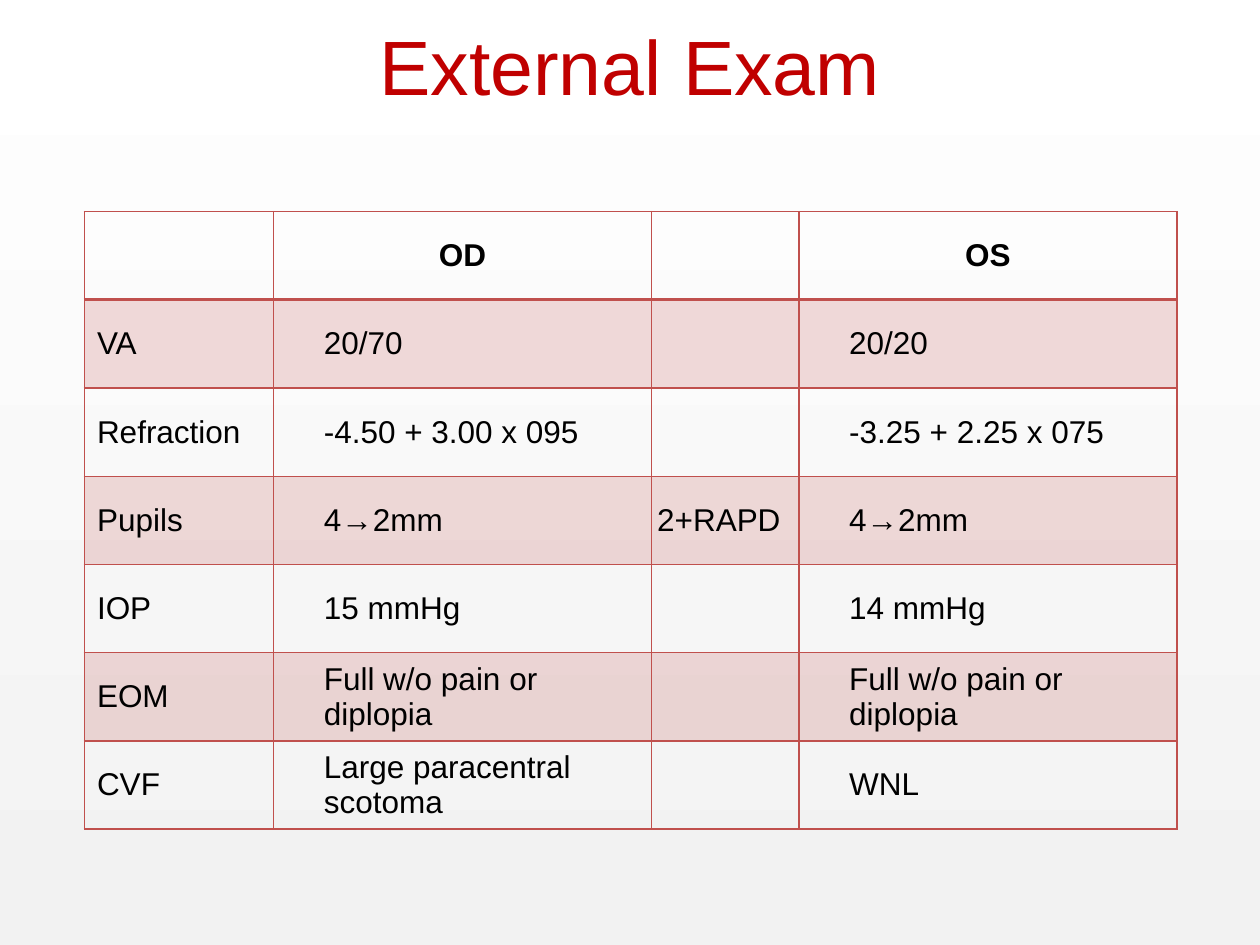
from dataclasses import dataclass

from lxml import etree
from pptx import Presentation
from pptx.dml.color import RGBColor
from pptx.enum.text import MSO_ANCHOR, PP_ALIGN
from pptx.oxml.ns import qn
from pptx.util import Inches, Pt

MIDDLE = MSO_ANCHOR.MIDDLE
CENTER = PP_ALIGN.CENTER
LEFT = PP_ALIGN.LEFT


@dataclass(frozen=True)
class Theme:
    font: str = "Arial"
    title: str = "C00000"
    text: str = "000000"
    accent: str = "C0504D"
    top: str = "FFFFFF"
    base: str = "F2F2F2"
    band: int = 20
    head_size: int = 44
    cell_size: int = 18


THEME = Theme()
COLS = [1.5, 3, 1.17, 3]
ROW = 0.7
EXAM = [
    ["", "OD", "", "OS"],
    ["VA", "20/70", "", "20/20"],
    ["Refraction", "-4.50 + 3.00 x 095", "", "-3.25 + 2.25 x 075"],
    ["Pupils", "4→2mm", "2+RAPD", "4→2mm"],
    ["IOP", "15 mmHg", "", "14 mmHg"],
    ["EOM", "Full w/o pain or diplopia", "", "Full w/o pain or diplopia"],
    ["CVF", "Large paracentral scotoma", "", "WNL"],
]


def write(frame, text, size, color, align, bold=False):
    para = frame.paragraphs[0]
    para.alignment = align
    run = para.add_run()
    run.text = text
    font = run.font
    font.name, font.size, font.bold = THEME.font, Pt(size), bold
    font.color.rgb = RGBColor.from_string(color)


def paint(slide):
    fill = slide.background.fill
    fill.gradient()
    fill.gradient_angle = 90
    for stop, color, place in zip(fill.gradient_stops, (THEME.base, THEME.top), (0, 1)):
        stop.color.rgb = RGBColor.from_string(color)
        stop.position = place


def add_title(slide, box, text):
    title = slide.shapes.title
    title.left, title.top, title.width, title.height = map(Inches, box)
    frame = title.text_frame
    frame.vertical_anchor = MIDDLE
    write(frame, text, THEME.head_size, THEME.title, CENTER)


def edge(cell, side, width):
    line = etree.SubElement(cell._tc.get_or_add_tcPr(), qn(f"a:ln{side}"), w=str(Pt(width)))
    solid = etree.SubElement(line, qn("a:solidFill"))
    etree.SubElement(solid, qn("a:srgbClr"), val=THEME.accent)


def shade(cell, banded):
    if not banded:
        cell.fill.background()
        return
    cell.fill.solid()
    cell.fill.fore_color.rgb = RGBColor.from_string(THEME.accent)
    color = cell._tc.tcPr.find(qn("a:solidFill")).find(qn("a:srgbClr"))
    etree.SubElement(color, qn("a:alpha"), val=str(THEME.band * 1000))


def fill_cell(cell, text, row, col):
    head = row == 0
    for side in "LRTB":
        heavy = (head and side == "B") or (row == 1 and side == "T")
        edge(cell, side, 2 if heavy else 1)
    shade(cell, row % 2 == 1)
    cell.vertical_anchor = MIDDLE
    if not text:
        return
    if not head and col:
        cell.margin_left = Inches(0 if col == 2 else 0.4)
    align = CENTER if head or col == 2 else LEFT
    write(cell.text_frame, text, THEME.cell_size, THEME.text, align, head)


def add_exam(slide, left, top):
    size = map(Inches, (left, top, sum(COLS), ROW * len(EXAM)))
    table = slide.shapes.add_table(len(EXAM), len(COLS), *size).table
    table.horz_banding = False
    table.first_row = False
    for col, width in zip(table.columns, COLS):
        col.width = Inches(width)
    for r, line in enumerate(EXAM):
        table.rows[r].height = Inches(ROW)
        for c, text in enumerate(line):
            fill_cell(table.cell(r, c), text, r, c)


def main():
    deck = Presentation()
    deck.slide_width, deck.slide_height = Inches(10), Inches(7.5)
    slide = deck.slides.add_slide(deck.slide_layouts[5])
    paint(slide)
    add_exam(slide, 0.67, 1.68)
    add_title(slide, (0, -0.11, 10, 1.25), "External Exam")
    deck.save("out.pptx")


if __name__ == "__main__":
    main()
